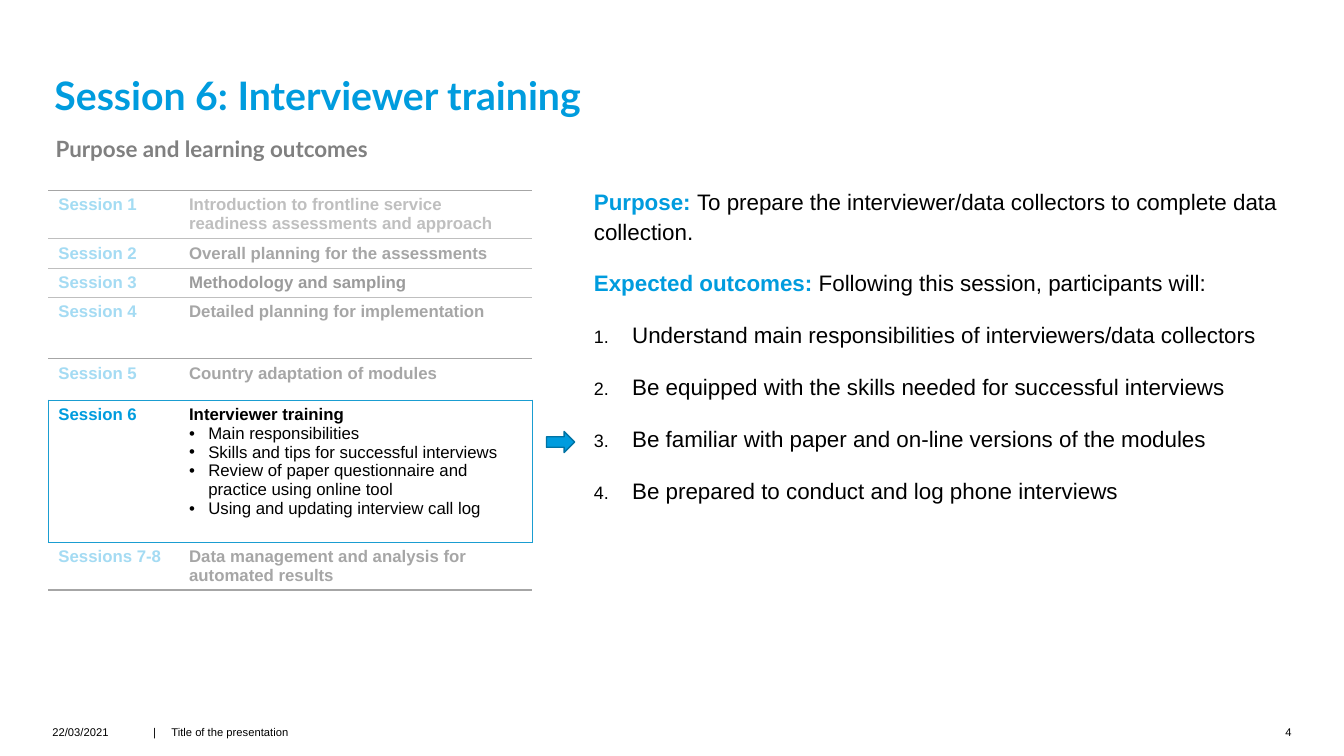
import pptx
import pptx.dml.color
import pptx.enum.shapes
import pptx.enum.text
import pptx.oxml
import pptx.oxml.ns
import pptx.util

Pt = pptx.util.Pt
ANCHOR = pptx.enum.text.MSO_ANCHOR
ALIGN = pptx.enum.text.PP_ALIGN
NS = pptx.oxml.ns.nsdecls("a")

BLUE, PALE, BLACK = "009CDE", "A4DBF3", "000000"
GREY, LIGHT, FRAME = "A6A6A6", "BFBFBF", "1A9DD1"

# Name, name colour, heading, heading colour, bullets, row height weight
SESSIONS = [
    ("Session 1", "A3DCF3",
     "Introduction to frontline service readiness assessments and approach", LIGHT, [], 0.48),
    ("Session 2", PALE, "Overall planning for the assessments", GREY, [], 0.29),
    ("Session 3", PALE, "Methodology and sampling", "9B9B9B", [], 0.29),
    ("Session 4", PALE, "Detailed planning for implementation", GREY, [], 0.61),
    ("Session 5", PALE, "Country adaptation of modules", GREY, [], 0.41),
    ("Session 6", BLUE, "Interviewer training", BLACK,
     ["Main responsibilities", "Skills and tips for successful interviews",
      "Review of paper questionnaire and practice using online tool",
      "Using and updating interview call log"], 1.41),
    ("Sessions 7-8", PALE, "Data management and analysis for automated results", GREY, [], 0.47),
]
# Horizontal rules from the top edge of the table to the bottom edge
RULES = [GREY, LIGHT, LIGHT, LIGHT, GREY, FRAME, FRAME, GREY]
CURRENT = 5

INTRO = [
    ("Purpose: ", "To prepare the interviewer/data collectors to complete data collection."),
    ("Expected outcomes: ", "Following this session, participants will:"),
]
OUTCOMES = [
    "Understand main responsibilities of interviewers/data collectors",
    "Be equipped with the skills needed for successful interviews",
    "Be familiar with paper and on-line versions of the modules",
    "Be prepared to conduct and log phone interviews",
]

prs = pptx.Presentation()
prs.slide_width = pptx.util.Inches(13.33)
prs.slide_height = pptx.util.Inches(7.5)


def rgb(color):
    return pptx.dml.color.RGBColor.from_string(color)


def box(x, y, w, h):
    """Turn percentages of the slide into left, top, width, height."""
    across, down = prs.slide_width / 100, prs.slide_height / 100
    return int(x * across), int(y * down), int(w * across), int(h * down)


def place(sp, area):
    sp.left, sp.top, sp.width, sp.height = area


def frame(sp, anchor, left=0, right=0):
    tf = sp.text_frame
    tf.word_wrap = True
    tf.auto_size = pptx.enum.text.MSO_AUTO_SIZE.NONE
    tf.vertical_anchor = anchor
    tf.margin_left, tf.margin_right = pptx.util.Inches(left), pptx.util.Inches(right)
    tf.margin_top = tf.margin_bottom = 0
    return tf


def next_paragraph(tf):
    """Use the empty first paragraph, then add new ones."""
    return tf.add_paragraph() if tf.paragraphs[0].runs else tf.paragraphs[0]


def add_run(p, text, size, color, bold=False, font="Arial"):
    r = p.add_run()
    r.text = text
    r.font.size, r.font.name, r.font.bold = Pt(size), font, bold
    r.font.color.rgb = rgb(color)


def bullet(p, indent, *marks):
    pPr = p._p.get_or_add_pPr()
    pPr.set("marL", str(pptx.util.Inches(indent)))
    pPr.set("indent", str(-pptx.util.Inches(indent)))
    for mark in marks:
        name, rest = mark.split(" ", 1) if " " in mark else (mark, "")
        pPr.append(pptx.oxml.parse_xml(f"<a:{name} {NS} {rest}/>"))


def space(p, first):
    p.line_spacing = 1.1
    p.space_before = Pt(0 if first else 10)
    p.space_after = Pt(6)


def border(cell, side, color):
    paint = f'<a:solidFill><a:srgbClr val="{color}"/></a:solidFill>' if color else "<a:noFill/>"
    cell._tc.get_or_add_tcPr().append(
        pptx.oxml.parse_xml(f'<a:ln{side} {NS} w="12700">{paint}</a:ln{side}>'))


def add_headings(title, subtitle, title_area, subtitle_area):
    place(title, title_area)
    p = frame(title, ANCHOR.BOTTOM, 0.02, 0.39).paragraphs[0]
    p.alignment, p.line_spacing = ALIGN.LEFT, 0.9
    add_run(p, "Session 6: Interviewer training", 28, BLUE, True, "Lato")

    place(subtitle, subtitle_area)
    p = frame(subtitle, ANCHOR.MIDDLE, 0.02, 0.02).paragraphs[0]
    bullet(p, 0, "buNone")
    space(p, True)
    add_run(p, "Purpose and learning outcomes", 16, "808080", True, "Lato")


def add_outcomes(body, area):
    place(body, area)
    tf = frame(body, ANCHOR.TOP, 0.02, 0.02)
    for i, (label, text) in enumerate(INTRO):
        p = next_paragraph(tf)
        bullet(p, 0, "buNone")
        space(p, i == 0)
        add_run(p, label, 16, BLUE, True)
        add_run(p, text, 16, BLACK)
    for text in OUTCOMES:
        p = next_paragraph(tf)
        bullet(p, 0.38, 'buSzPct val="80000"', 'buFont typeface="Arial"',
               'buAutoNum type="arabicPeriod"')
        space(p, False)
        add_run(p, text, 16, BLACK)


def add_sessions(s, area):
    left, top, width, height = area
    table = s.shapes.add_table(len(SESSIONS), 2, left, top, width, height).table
    table.first_row = table.horz_banding = False
    table.columns[0].width = int(width * 0.27)
    table.columns[1].width = width - table.columns[0].width
    total = sum(session[-1] for session in SESSIONS)

    for i, (name, name_color, heading, color, points, weight) in enumerate(SESSIONS):
        table.rows[i].height = int(height * weight / total)
        edge = FRAME if i == CURRENT else None
        cells = table.cell(i, 0), table.cell(i, 1)
        for cell, sides in zip(cells, ((edge, None), (None, edge))):
            for side, line in zip("LRTB", (*sides, RULES[i], RULES[i + 1])):
                border(cell, side, line)
            cell.fill.background()
        add_run(cells[0].text_frame.paragraphs[0], name, 12, name_color, True)
        tf = cells[1].text_frame
        add_run(tf.paragraphs[0], heading, 12, color, True)
        for point in points:
            p = next_paragraph(tf)
            bullet(p, 0.19, 'buFont typeface="Arial"', 'buChar char="•"')
            add_run(p, point, 12, BLACK)


def add_arrow(s, area):
    sp = s.shapes.add_shape(pptx.enum.shapes.MSO_SHAPE.RIGHT_ARROW, *area)
    sp.shadow.inherit = False
    sp.fill.solid()
    sp.fill.fore_color.rgb = rgb(BLUE)
    sp.line.color.rgb = rgb("0073A4")
    sp.line.width = Pt(1)


def add_footer(s, y, h):
    parts = [("22/03/2021", 3.9, 6.45, ALIGN.LEFT),
             ("|\tTitle of the presentation", 11.4, 24.38, ALIGN.LEFT),
             ("4", 93.7, 2.4, ALIGN.RIGHT)]
    for text, x, w, align in parts:
        p = frame(s.shapes.add_textbox(*box(x, y, w, h)), ANCHOR.TOP).paragraphs[0]
        if "\t" in text:
            stop = pptx.util.Inches(0.18)
            p._p.get_or_add_pPr().append(pptx.oxml.parse_xml(
                f'<a:tabLst {NS}><a:tab pos="{stop}" algn="l"/></a:tabLst>'))
        p.alignment = align
        add_run(p, text, 8, BLACK)


def main():
    s = prs.slides.add_slide(prs.slide_layouts.get_by_name("Two Content"))
    title, body, subtitle = s.placeholders
    add_outcomes(body, box(44.04, 24.53, 53.71, 56.27))
    add_headings(title, subtitle, box(3.9, 5.2, 66.92, 10.53), box(3.98, 17.33, 66.92, 4.27))
    add_footer(s, 96, 2.67)
    add_arrow(s, box(40.66, 57.07, 2.1, 2.8))
    add_sessions(s, box(3.6, 25.2, 36, 52.8))
    prs.save("out.pptx")


if __name__ == "__main__":
    main()
